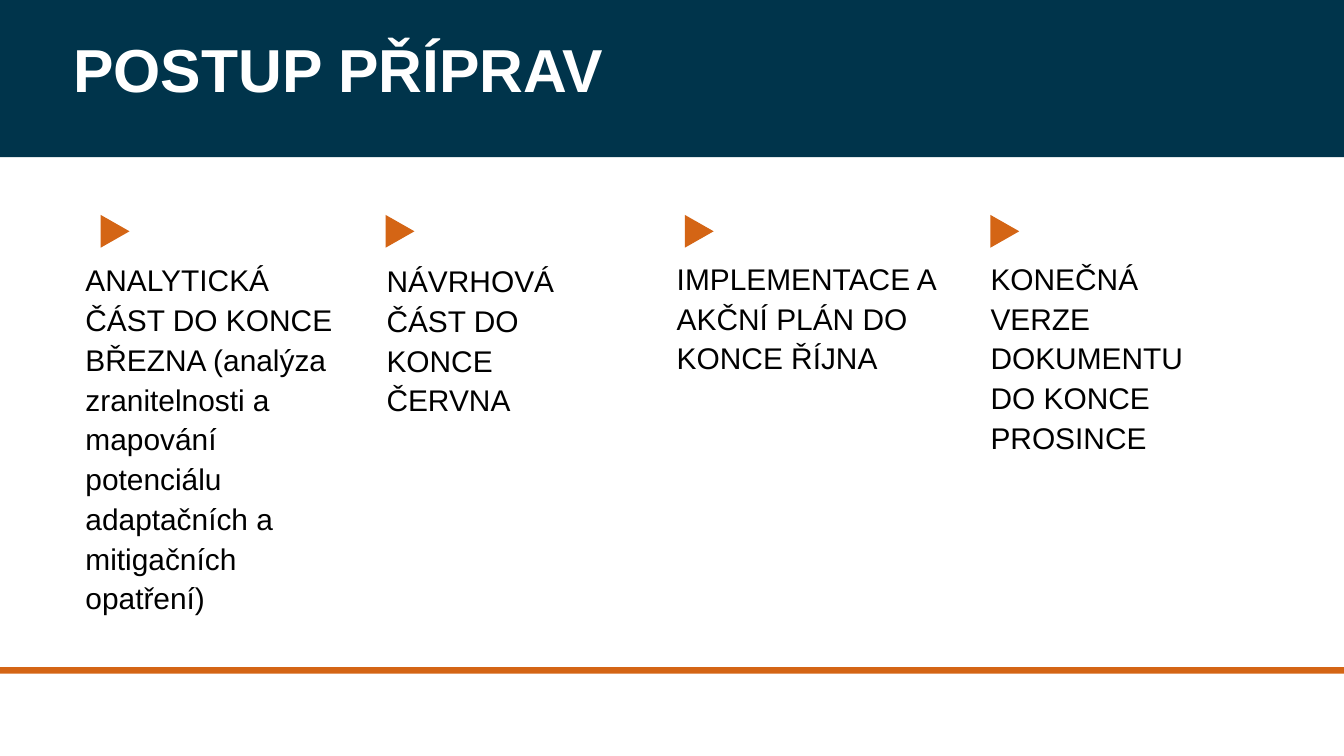
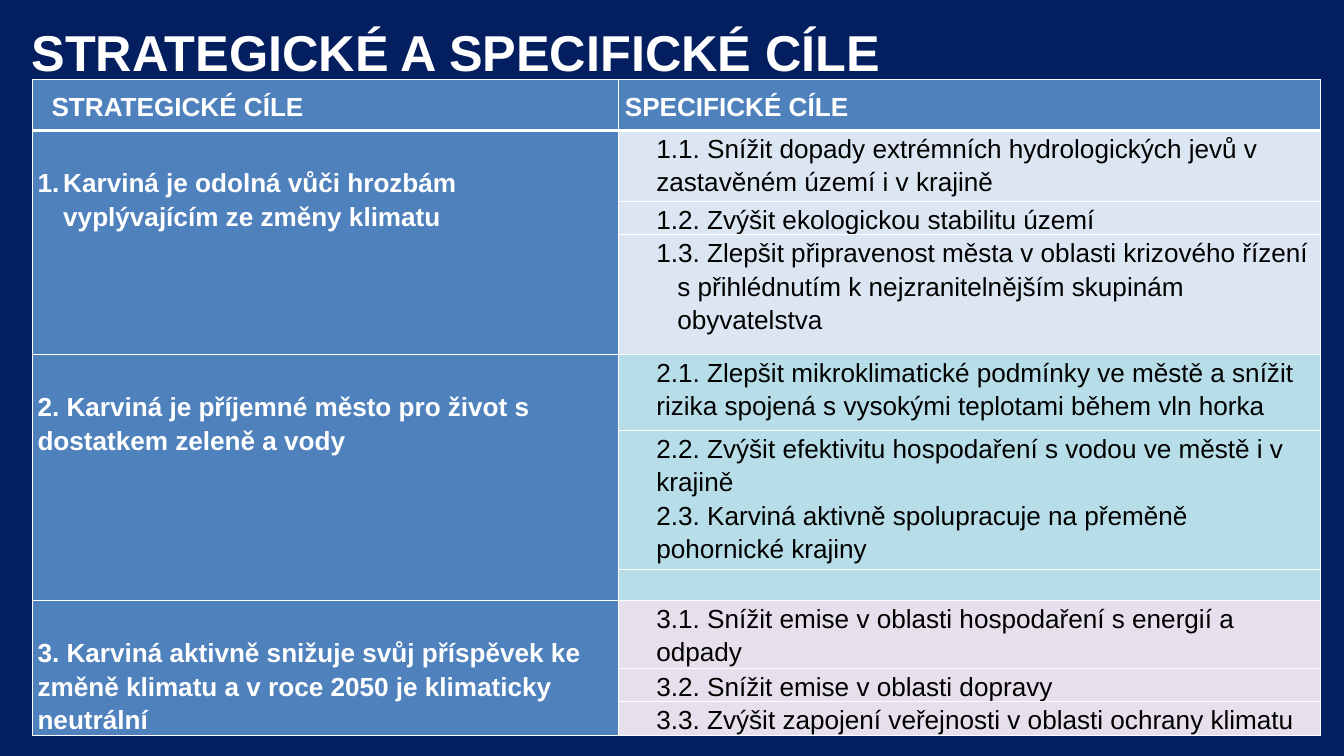
from lxml import etree
from pptx import Presentation
from pptx.dml.color import RGBColor
from pptx.enum.shapes import MSO_SHAPE
from pptx.enum.text import MSO_ANCHOR, MSO_AUTO_SIZE, PP_ALIGN
from pptx.oxml.ns import qn
from pptx.util import Cm, Pt

RECT, TRIANGLE = MSO_SHAPE.RECTANGLE, MSO_SHAPE.ISOSCELES_TRIANGLE
TOP, MIDDLE = MSO_ANCHOR.TOP, MSO_ANCHOR.MIDDLE
LEFT, JUSTIFY = PP_ALIGN.LEFT, PP_ALIGN.JUSTIFY
NO_FIT = MSO_AUTO_SIZE.NONE

FONT = "Arial"
WIDTH, HEIGHT = 50.8, 28.58
COLORS = {
    "white": "FFFFFF", "black": "000000", "teal": "00344B", "navy": "041F60",
    "orange": "D46515", "blue": "4F81BD", "pale_blue": "DCE6F2",
    "pale_aqua": "B7DEE8", "pale_violet": "E6E0EC",
}

# Slide 1: (text, arrow left, text box)
PHASES = [
    ("ANALYTICKÁ ČÁST DO KONCE BŘEZNA (analýza zranitelnosti a mapování "
     "potenciálu adaptačních a mitigačních opatření)",
     3.73, (3.23, 9.75, 9.91, 13.59)),
    ("NÁVRHOVÁ ČÁST DO KONCE ČERVNA", 14.5, (14.61, 9.78, 8.61, 5.99)),
    ("IMPLEMENTACE A AKČNÍ PLÁN DO KONCE ŘÍJNA",
     25.81, (25.58, 9.7, 10.16, 4.47)),
    ("KONEČNÁ VERZE DOKUMENTU DO KONCE PROSINCE",
     37.36, (37.44, 9.7, 8.53, 7.52)),
]

# Slide 2: paragraph formats, then (goal, goal format, tint, cells of aims)
PLAIN = {}
ITEM = {"margin": 1.27}
NUMBERED_ITEM = {"margin": 2.06, "indent": -0.79, "numbered": True}
NUMBERED_GOAL = {"margin": 0.97, "indent": -0.97, "numbered": True}
HEADERS = [("STRATEGICKÉ CÍLE", {"margin": 0.53}),
           ("SPECIFICKÉ CÍLE", {"margin": 0.08, "align": JUSTIFY})]
GOALS = [
    ("Karviná je odolná vůči hrozbám vyplývajícím ze změny klimatu",
     NUMBERED_GOAL, "pale_blue", [
         (ITEM, ["1.1. Snížit dopady extrémních hydrologických jevů "
                 "v zastavěném území i v krajině"]),
         (NUMBERED_ITEM, ["2. Zvýšit ekologickou stabilitu území"]),
         (NUMBERED_ITEM, ["3. Zlepšit připravenost města v oblasti krizového řízení "
                          "s přihlédnutím k nejzranitelnějším skupinám obyvatelstva"]),
     ]),
    ("2. Karviná je příjemné město pro život s dostatkem zeleně a vody",
     PLAIN, "pale_aqua", [
         (ITEM, ["2.1. Zlepšit mikroklimatické podmínky ve městě a snížit "
                 "rizika spojená s vysokými teplotami během vln horka"]),
         (ITEM, ["2.2. Zvýšit efektivitu hospodaření s vodou ve městě i v krajině",
                 "2.3. Karviná aktivně spolupracuje na přeměně pohornické krajiny"]),
         (ITEM, []),
     ]),
    ("3. Karviná aktivně snižuje svůj příspěvek ke změně klimatu "
     "a v roce 2050 je klimaticky neutrální",
     PLAIN, "pale_violet", [
         (ITEM, ["3.1. Snížit emise v oblasti hospodaření s energií a odpady"]),
         (ITEM, ["3.2. Snížit emise v oblasti dopravy"]),
         (ITEM, ["3.3. Zvýšit zapojení veřejnosti v oblasti ochrany klimatu"]),
     ]),
]
COLUMNS = [22.12, 26.54]
ROWS = [1.93, 2.67, 1.27, 4.52, 2.87, 5.26, 1.17, 2.57, 1.27, 1.22]
GOAL_TOP = 1.3


def rgb(name):
    return RGBColor.from_string(COLORS[name])


def cm(*lengths):
    return [Cm(n) for n in lengths]


def write(tf, text, size=28, color="black", bold=False, align=LEFT, spacing=1.15,
          before=0, margin=0, indent=0, numbered=False):
    """Fill the empty first paragraph, or add one below."""
    p = tf.paragraphs[-1]
    if p.runs:
        p = tf.add_paragraph()
    p.alignment, p.line_spacing, p.space_before = align, spacing, Pt(before)
    pPr = p._p.get_or_add_pPr()
    pPr.set("marL", str(Cm(margin)))
    pPr.set("indent", str(Cm(indent)))
    if numbered:
        etree.SubElement(pPr, qn("a:buFont")).set("typeface", "+mj-lt")
        etree.SubElement(pPr, qn("a:buAutoNum")).set("type", "arabicPeriod")
    r = p.add_run()
    r.text = text
    r.font.name, r.font.size, r.font.bold = FONT, Pt(size), bold
    r.font.color.rgb = rgb(color)


def set_frame(tf):
    tf.word_wrap, tf.auto_size, tf.vertical_anchor = True, NO_FIT, TOP
    tf.margin_left = tf.margin_right = tf.margin_top = tf.margin_bottom = 0


def add_block(s, kind, box, color):
    shape = s.shapes.add_shape(kind, *cm(*box))
    shape.shadow.inherit = False
    shape.fill.solid()
    shape.fill.fore_color.rgb = rgb(color)
    shape.line.fill.background()
    return shape


def add_slide(prs, title, box, band_height, band_color, **fmt):
    """Title-only slide with a coloured band behind its title."""
    s = prs.slides.add_slide(prs.slide_layouts[5])
    band = add_block(s, RECT, (0, 0, WIDTH, band_height), band_color)
    s.shapes._spTree.insert(2, band._element)
    sp = s.shapes.title
    sp.left, sp.top, sp.width, sp.height = cm(*box)
    set_frame(sp.text_frame)
    write(sp.text_frame, title, color="white", bold=True, **fmt)
    return s


def format_cell(cell, fill, bottom=1, anchor=TOP, top=0):
    cell.margin_left = cell.margin_right = Cm(0.18)
    cell.margin_top, cell.margin_bottom = Cm(top), 0
    cell.vertical_anchor = anchor
    cell.fill.solid()
    cell.fill.fore_color.rgb = rgb(fill)
    tcPr = cell._tc.get_or_add_tcPr()
    for i, (side, width) in enumerate(
            [("lnL", 1), ("lnR", 1), ("lnT", 1), ("lnB", bottom)]):
        ln = etree.Element(qn(f"a:{side}"), w=str(Pt(width)))
        solid = etree.SubElement(ln, qn("a:solidFill"))
        etree.SubElement(solid, qn("a:srgbClr")).set("val", COLORS["white"])
        tcPr.insert(i, ln)


def build_phases(prs):
    s = add_slide(prs, "POSTUP PŘÍPRAV", (2.77, 1.22, 21, 2.82), 5.94, "teal",
                  size=65, spacing=1, before=1)
    for text, arrow_left, box in PHASES:
        arrow = add_block(s, TRIANGLE, (arrow_left, 8.2, 1.24, 1.09), "orange")
        arrow.rotation = 90
        tf = s.shapes.add_textbox(*cm(*box)).text_frame
        set_frame(tf)
        write(tf, text, size=32, spacing=1.11, before=0.9)
    # Footer line
    add_block(s, RECT, (0, 25.22, WIDTH, 0.25), "orange")


def build_goals(prs):
    s = add_slide(prs, "STRATEGICKÉ A SPECIFICKÉ CÍLE", (1.19, 0.25, 40.44, 2.69),
                  HEIGHT, "navy", size=54, spacing=Pt(80.5))
    table = s.shapes.add_table(len(ROWS), len(COLUMNS),
                               *cm(1.24, 3, sum(COLUMNS), sum(ROWS))).table
    table.first_row = table.horz_banding = False
    for column, width in zip(table.columns, COLUMNS):
        column.width = Cm(width)
    for row, height in zip(table.rows, ROWS):
        row.height = Cm(height)

    # Header row
    for c, (text, fmt) in enumerate(HEADERS):
        cell = table.cell(0, c)
        format_cell(cell, "blue", bottom=3, anchor=MIDDLE)
        write(cell.text_frame, text, color="white", bold=True, **fmt)

    # Each goal spans the rows of its aims
    row = 1
    for goal, goal_fmt, tint, aims in GOALS:
        first = table.cell(row, 0)
        first.merge(table.cell(row + len(aims) - 1, 0))
        write(first.text_frame, goal, color="white", bold=True, **goal_fmt)
        for i, (fmt, texts) in enumerate(aims):
            format_cell(table.cell(row + i, 0), "blue", top=0 if i else GOAL_TOP)
            cell = table.cell(row + i, 1)
            format_cell(cell, tint)
            for text in texts:
                write(cell.text_frame, text, **fmt)
        row += len(aims)


def main():
    prs = Presentation()
    prs.slide_width, prs.slide_height = cm(WIDTH, HEIGHT)
    build_phases(prs)
    build_goals(prs)
    prs.save("out.pptx")


if __name__ == "__main__":
    main()
